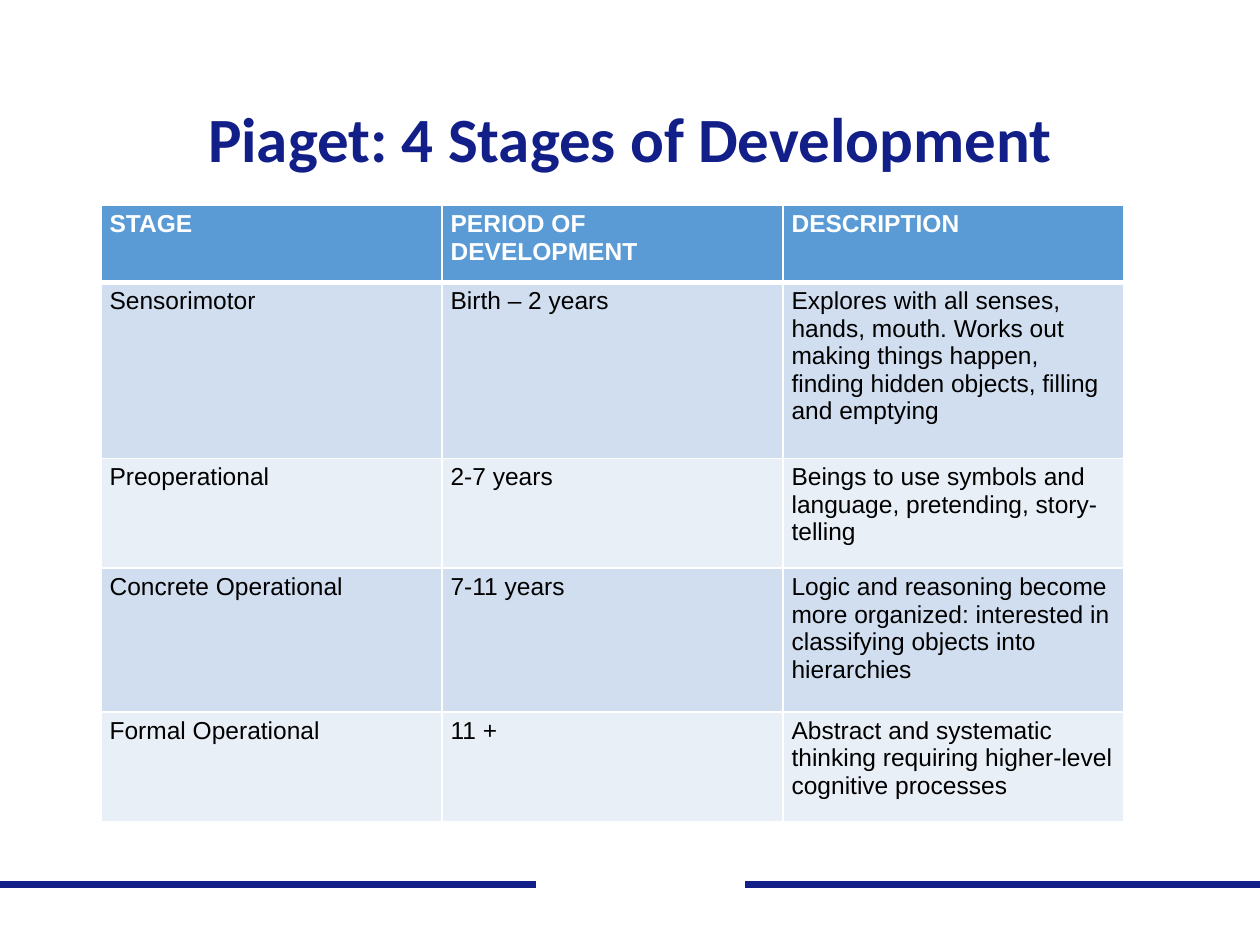
from lxml.etree import SubElement
from pptx import Presentation
from pptx.dml.color import RGBColor
from pptx.enum.shapes import MSO_CONNECTOR as Connector
from pptx.enum.text import MSO_ANCHOR as Anchor, PP_ALIGN as Align
from pptx.oxml import parse_xml
from pptx.oxml.ns import nsdecls, qn
from pptx.util import Inches, Pt

NAVY, WHITE, BLACK = "121F88", "FFFFFF", "000000"
HEADER, BANDS = "5B9BD5", ("D0DEEF", "E9EFF7")
COLUMNS, ROWS = 100, 75

STAGES = [
    ("STAGE", "PERIOD OF DEVELOPMENT", "DESCRIPTION"),
    ("Sensorimotor", "Birth – 2 years",
     "Explores with all senses, hands, mouth. Works out making things happen, "
     "finding hidden objects, filling and emptying"),
    ("Preoperational", "2-7 years",
     "Beings to use symbols and language, pretending, story-telling"),
    ("Concrete Operational", "7-11 years",
     "Logic and reasoning become more organized: interested in classifying "
     "objects into hierarchies"),
    ("Formal Operational", "11 +",
     "Abstract and systematic thinking requiring higher-level cognitive processes"),
]
ROW_HEIGHTS = (6.1, 14, 8.7, 11.4, 8.7)


def color(value):
    return RGBColor.from_string(value)


class SlideBuilder:
    def __init__(self, presentation):
        self.slide = presentation.slides.add_slide(presentation.slide_layouts[6])
        self.column = presentation.slide_width / COLUMNS
        self.row = presentation.slide_height / ROWS

    def place(self, left, top, width, height):
        return (int(left * self.column), int(top * self.row),
                int(width * self.column), int(height * self.row))

    def add_text(self, paragraph, text, font, size, fill, bold=False):
        run = paragraph.add_run()
        run.text = text
        run.font.name, run.font.size, run.font.bold = font, Pt(size), bold
        run.font.color.rgb = color(fill)

    def line(self, start, end, top, fill, width=4.5):
        left, y, right, _ = self.place(start, top, end, 0)
        connector = self.slide.shapes.add_connector(Connector.STRAIGHT, left, y, right, y)
        connector.line.color.rgb = color(fill)
        connector.line.width = Pt(width)
        SubElement(connector._element.spPr, qn("a:effectLst"))

    def title(self, text, *area):
        shape = self.slide.shapes.add_textbox(*self.place(*area))
        frame = shape.text_frame
        frame.word_wrap = True
        frame.vertical_anchor = Anchor.MIDDLE
        paragraph = frame.paragraphs[0]
        paragraph.alignment = Align.CENTER
        paragraph.line_spacing = 0.9
        self.add_text(paragraph, text, "Calibri", 36, NAVY, True)

    def borders(self, cell, top, bottom):
        properties = cell._tc.get_or_add_tcPr()
        widths = {"lnL": 1, "lnR": 1, "lnT": top, "lnB": bottom}
        for position, (side, width) in enumerate(widths.items()):
            properties.insert(position, parse_xml(
                f'<a:{side} {nsdecls("a")} w="{Pt(width)}"><a:solidFill>'
                f'<a:srgbClr val="{WHITE}"/></a:solidFill></a:{side}>'))

    def cell(self, cell, text, row):
        header = row == 0
        cell.fill.solid()
        cell.fill.fore_color.rgb = color(HEADER if header else BANDS[(row - 1) % 2])
        cell.margin_left = cell.margin_right = Inches(0.07)
        cell.margin_top = cell.margin_bottom = Inches(0.04)
        self.borders(cell, 3 if row == 1 else 1, 3 if header else 1)
        self.add_text(cell.text_frame.paragraphs[0], text, "Arial", 14,
                      WHITE if header else BLACK, header)

    def table(self, records, heights, left, top, width):
        area = self.place(left, top, width, sum(heights))
        table = self.slide.shapes.add_table(len(records), len(records[0]), *area).table
        for row, (record, height) in enumerate(zip(records, heights)):
            table.rows[row].height = int(height * self.row)
            for column, text in enumerate(record):
                self.cell(table.cell(row, column), text, row)


def main():
    presentation = Presentation()
    presentation.slide_width, presentation.slide_height = Inches(10), Inches(7.5)
    builder = SlideBuilder(presentation)
    builder.line(0, COLUMNS, 70.2, NAVY)
    builder.line(42.5, 59.1, 70.2, WHITE)
    builder.table(STAGES, ROW_HEIGHTS, 8, 16.3, 81.2)
    builder.title("Piaget: 4 Stages of Development", 6.9, 4, 86.2, 14.5)
    presentation.save("out.pptx")


if __name__ == "__main__":
    main()
